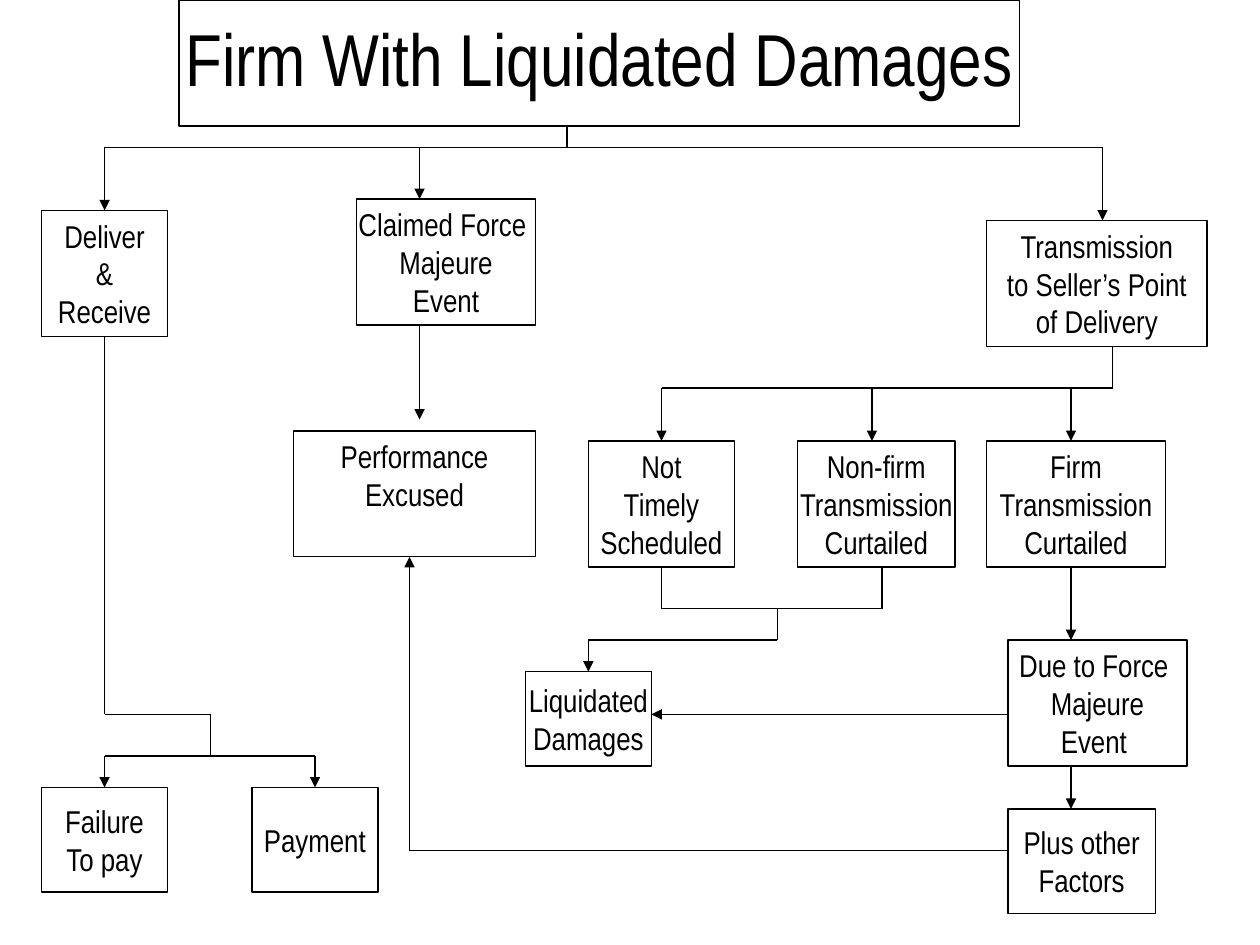
from dataclasses import dataclass
from itertools import pairwise
from typing import Optional

from pptx import Presentation
from pptx.dml.color import RGBColor
from pptx.enum.shapes import MSO_CONNECTOR as CONN, MSO_SHAPE as SHAPE
from pptx.enum.text import MSO_ANCHOR as ANCHOR, MSO_AUTO_SIZE as AUTO, PP_ALIGN as ALIGN
from pptx.oxml.ns import qn
from pptx.util import Inches, Pt
from lxml.etree import SubElement

TOP, BOTTOM = 0, 2


@dataclass(frozen=True)
class Theme:
    """Colours, font and sizes of the flowchart."""
    ink: RGBColor = RGBColor(0, 0, 0)
    paper: RGBColor = RGBColor(255, 255, 255)
    font: str = "Arial Narrow"
    title_size: int = 42
    box_size: int = 18
    line_width: float = 0.75


@dataclass(frozen=True)
class Box:
    """A captioned step; lift is extra bottom margin that raises its text."""
    lines: tuple[str, ...]
    left: float
    top: float
    width: float
    height: float = 1
    lift: float = 0
    side_margin: float = 0.1


@dataclass(frozen=True)
class Wire:
    """A run of straight lines, optionally glued to boxes at its ends."""
    points: tuple[tuple[float, float], ...]
    arrow: bool = True
    start: Optional[tuple[str, int]] = None
    end: Optional[tuple[str, int]] = None


THEME = Theme()
TITLE = Box(("Firm With Liquidated Damages",), 1.42, 0, 6.67, side_margin=0)
BOXES = {
    "deliver": Box(("Deliver", "&", "Receive"), 0.33, 1.67, 1),
    "claimed": Box(("Claimed Force ", "Majeure", "Event"), 2.83, 1.58, 1.42),
    "seller": Box(("Transmission", "to Seller’s Point", "of Delivery"), 7.83, 1.75, 1.75),
    "firm": Box(("Firm", "Transmission", "Curtailed"), 7.83, 3.5, 1.42),
    "nonfirm": Box(("Non-firm", "Transmission", "Curtailed"), 6.33, 3.5, 1.25),
    "untimely": Box(("Not", "Timely", "Scheduled"), 4.67, 3.5, 1.16),
    "damages": Box(("Liquidated", "Damages"), 4.17, 5.33, 1, 0.75),
    "due": Box(("Due to Force ", "Majeure", "Event "), 8, 5.08, 1.42),
    "factors": Box(("Plus other", "Factors"), 8, 6.42, 1.17, 0.83),
    "excused": Box(("Performance", "Excused"), 2.33, 3.42, 1.92, lift=0.3),
    "failure": Box(("Failure", "To pay"), 0.33, 6.25, 1, 0.83),
    "payment": Box(("Payment",), 2, 6.25, 1, 0.83),
}
WIRES = (
    Wire(((4.5, 1), (4.5, 1.17)), arrow=False),
    Wire(((4.5, 1.17), (0.83, 1.17), (0.83, 1.67)), end=("deliver", TOP)),
    Wire(((4.5, 1.17), (8.75, 1.17), (8.75, 1.75))),
    Wire(((3.33, 1.17), (3.33, 1.58))),
    Wire(((3.33, 2.58), (3.33, 3.33))),
    Wire(((8.83, 2.75), (8.83, 3.08), (5.25, 3.08), (5.25, 3.5)), end=("untimely", TOP)),
    Wire(((6.92, 3.08), (6.92, 3.5))),
    Wire(((8.5, 3.08), (8.5, 3.5))),
    Wire(((5.25, 4.5), (5.25, 4.83), (7, 4.83), (7, 4.5)), arrow=False,
         start=("untimely", BOTTOM)),
    Wire(((6.17, 4.83), (6.17, 5.08), (4.67, 5.08), (4.67, 5.33)), end=("damages", TOP)),
    Wire(((8.5, 4.5), (8.5, 5.08))),
    Wire(((8, 5.67), (5.17, 5.67))),
    Wire(((8.5, 6.08), (8.5, 6.42))),
    Wire(((8, 6.75), (3.25, 6.75), (3.25, 4.42))),
    Wire(((0.83, 2.67), (0.83, 5.67), (1.67, 5.67), (1.67, 6)), arrow=False,
         start=("deliver", BOTTOM)),
    Wire(((1.67, 6), (0.83, 6), (0.83, 6.25)), end=("failure", TOP)),
    Wire(((1.67, 6), (2.5, 6), (2.5, 6.25)), end=("payment", TOP)),
)


def set_line(s) -> None:
    """Give a shape or connector the common thin outline."""
    s.line.color.rgb = THEME.ink
    s.line.width = Pt(THEME.line_width)


def write_text(s, box: Box, size: int, spacing: float = 1) -> None:
    """Write the box caption, one centred paragraph per line."""
    tf = s.text_frame
    tf.word_wrap = False
    tf.auto_size = AUTO.NONE
    tf.vertical_anchor = ANCHOR.MIDDLE
    tf.margin_left = tf.margin_right = Inches(box.side_margin)
    tf.margin_top, tf.margin_bottom = Inches(0.05), Inches(0.05 + box.lift)
    for i, line in enumerate(box.lines):
        p = tf.add_paragraph() if i else tf.paragraphs[0]
        p.alignment = ALIGN.CENTER
        p.line_spacing = spacing
        p.space_before = p.space_after = Pt(0)
        r = p.add_run()
        r.text = line
        r.font.name = THEME.font
        r.font.size = Pt(size)
        r.font.color.rgb = THEME.ink


def add_title(slide) -> None:
    """Place and format the title placeholder."""
    s = slide.shapes.title
    s.left, s.top = Inches(TITLE.left), Inches(TITLE.top)
    s.width, s.height = Inches(TITLE.width), Inches(TITLE.height)
    set_line(s)
    write_text(s, TITLE, THEME.title_size, spacing=0.9)


def add_box(slide, box: Box):
    """Draw one step and return its shape."""
    s = slide.shapes.add_shape(SHAPE.RECTANGLE, Inches(box.left), Inches(box.top),
                               Inches(box.width), Inches(box.height))
    s.shadow.inherit = False
    s.fill.solid()
    s.fill.fore_color.rgb = THEME.paper
    set_line(s)
    write_text(s, box, THEME.box_size)
    return s


def add_wire(slide, wire: Wire, steps: dict) -> None:
    """Draw a wire segment by segment, with its arrowhead and joints."""
    segments = []
    for (x1, y1), (x2, y2) in pairwise(wire.points):
        s = slide.shapes.add_connector(CONN.STRAIGHT, Inches(x1), Inches(y1),
                                       Inches(x2), Inches(y2))
        set_line(s)
        SubElement(s._element.spPr, qn("a:effectLst"))
        segments.append(s)
    if wire.start:
        name, side = wire.start
        segments[0].begin_connect(steps[name], side)
    if wire.end:
        name, side = wire.end
        segments[-1].end_connect(steps[name], side)
    if wire.arrow:
        ln = segments[-1].line._get_or_add_ln()
        SubElement(ln, qn("a:tailEnd"), type="triangle")


def main() -> None:
    """Build and save the flowchart slide."""
    prs = Presentation()
    prs.slide_width, prs.slide_height = Inches(10), Inches(7.5)
    slide = prs.slides.add_slide(prs.slide_layouts[5])
    add_title(slide)
    steps = {name: add_box(slide, box) for name, box in BOXES.items()}
    for wire in WIRES:
        add_wire(slide, wire, steps)
    prs.save("out.pptx")


if __name__ == "__main__":
    main()
